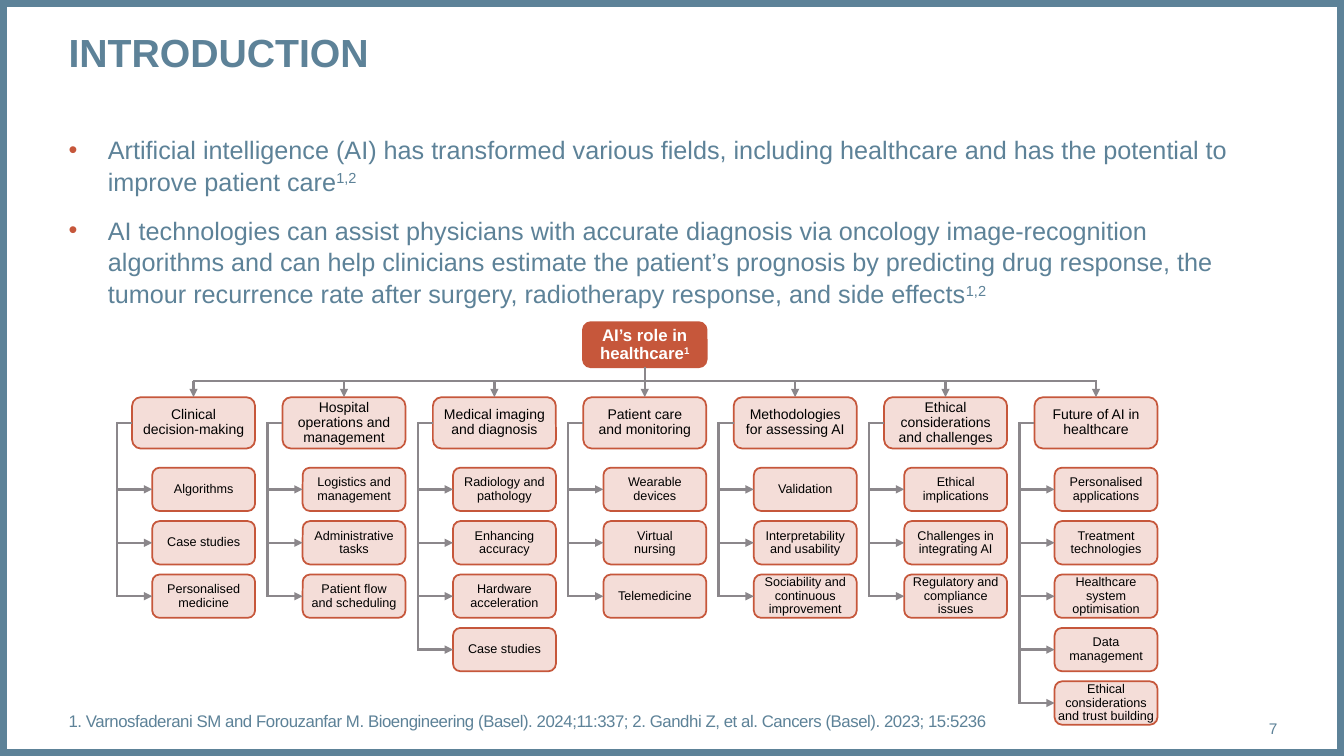
from dataclasses import dataclass
from typing import Any, NamedTuple, Optional

from lxml import etree
from pptx import Presentation
from pptx import util as u
from pptx.dml.color import RGBColor
from pptx.enum import shapes, text
from pptx.oxml.ns import qn


@dataclass(frozen=True)
class Theme:
    font: str = "Arial"
    slate: str = "5D8298"
    rust: str = "C6573B"
    blush: str = "F4DDD8"
    grey: str = "8B878B"
    white: str = "FFFFFF"
    black: str = "000000"
    title: float = 28
    body: float = 18
    reference: float = 12
    root: float = 12
    branch: float = 10
    leaf: float = 9
    page: float = 11


class Branch(NamedTuple):
    label: str
    leaves: list[str]


class Box(NamedTuple):
    left: float
    top: float
    width: float
    height: float

    @property
    def center(self) -> float:
        return self.left + self.width / 2

    @property
    def middle(self) -> float:
        return self.top + self.height / 2


THEME = Theme()
ALIGN = text.PP_ALIGN
ANCHOR = text.MSO_ANCHOR

POINTS = [
    "Artificial intelligence (AI) has transformed various fields, including healthcare "
    "and has the potential to improve patient care^1,2",
    "AI technologies can assist physicians with accurate diagnosis via oncology image-recognition\n"
    "algorithms and can help clinicians estimate the patient’s prognosis by predicting drug response, the\n"
    "tumour recurrence rate after surgery, radiotherapy response, and side effects^1,2",
]
REFERENCES = ("1. Varnosfaderani SM and Forouzanfar M. Bioengineering (Basel). 2024;11:337; "
              "2. Gandhi Z, et al. Cancers (Basel). 2023; 15:5236")
BRANCHES = [
    Branch("Clinical\ndecision-making", ["Algorithms", "Case studies", "Personalised\nmedicine"]),
    Branch("Hospital operations and management",
           ["Logistics and\nmanagement", "Administrative\ntasks", "Patient flow\nand scheduling"]),
    Branch("Medical imaging and diagnosis",
           ["Radiology and\npathology", "Enhancing\naccuracy", "Hardware\nacceleration", "Case studies"]),
    Branch("Patient care\nand monitoring", ["Wearable\ndevices", "Virtual\nnursing", "Telemedicine"]),
    Branch("Methodologies\nfor assessing AI",
           ["Validation", "Interpretability\nand usability", "Sociability and continuous\nimprovement"]),
    Branch("Ethical considerations\nand challenges",
           ["Ethical\nimplications", "Challenges in\nintegrating AI", "Regulatory and compliance issues"]),
    Branch("Future of AI in\nhealthcare",
           ["Personalised applications", "Treatment technologies", "Healthcare system optimisation",
            "Data management", "Ethical considerations and trust building"]),
]

BRANCH_LEFT, BRANCH_PITCH = 1.31, 8.95 / (len(BRANCHES) - 1)
LEAF_TOP, LEAF_PITCH = 4.64, 0.53
LEAF_INDENT, SPINE_OFFSET = 0.2, 0.15
BUS_Y = 3.78


def color(value: str) -> RGBColor:
    return RGBColor.from_string(value)


def place(part: Any, box: Box) -> None:
    part.left, part.top, part.width, part.height = map(u.Inches, box)


def write(part: Any, *paragraphs: str, size: float, ink: str = THEME.slate, bold: bool = False,
          align: Any = ALIGN.LEFT, anchor: Any = ANCHOR.TOP, line_spacing: float = 1.0,
          gap: float = 0, bullet: bool = False, tracking: int = 0) -> None:
    frame = part.text_frame
    frame.word_wrap = True
    frame.auto_size = text.MSO_AUTO_SIZE.NONE
    frame.vertical_anchor = anchor
    frame.margin_left = frame.margin_right = frame.margin_top = frame.margin_bottom = 0
    for index, content in enumerate(paragraphs):
        para = frame.add_paragraph() if index else frame.paragraphs[0]
        para.alignment = align
        para.line_spacing = line_spacing
        para.space_before = u.Pt(gap if index else 0)
        if bullet:
            props = para._p.get_or_add_pPr()
            props.set("marL", str(u.Inches(0.39)))
            props.set("indent", str(u.Inches(-0.39)))
            tint = etree.SubElement(props, qn("a:buClr"))
            etree.SubElement(tint, qn("a:srgbClr"), val=THEME.rust)
            etree.SubElement(props, qn("a:buFont"), typeface=THEME.font)
            etree.SubElement(props, qn("a:buChar"), char="•")
        for level, piece in enumerate(content.split("^")):
            for row, line in enumerate(piece.split("\n")):
                if row:
                    para.add_line_break()
                run = para.add_run()
                run.text = line
                run.font.name, run.font.size, run.font.bold = THEME.font, u.Pt(size), bold
                run.font.color.rgb = color(ink)
                if level:
                    run._r.get_or_add_rPr().set("baseline", "30000")
                if tracking:
                    run._r.get_or_add_rPr().set("spc", str(tracking))


def add_node(slide: Any, box: Box, label: str, size: float, fill: str = THEME.blush,
             ink: str = THEME.black, weight: float = 1.25, bold: bool = False) -> Any:
    node = slide.shapes.add_shape(shapes.MSO_SHAPE.ROUNDED_RECTANGLE, *map(u.Inches, box))
    node.shadow.inherit = False
    node.adjustments[0] = 0.17
    node.fill.solid()
    node.fill.fore_color.rgb = color(fill)
    node.line.color.rgb = color(THEME.rust)
    node.line.width = u.Pt(weight)
    write(node, label, size=size, ink=ink, bold=bold, align=ALIGN.CENTER,
          anchor=ANCHOR.MIDDLE, line_spacing=0.9)
    return node


def add_link(slide: Any, x1: float, y1: float, x2: float, y2: float, weight: float = 1.75,
             arrow: bool = False, source: Optional[tuple[Any, int]] = None,
             target: Optional[tuple[Any, int]] = None) -> None:
    link = slide.shapes.add_connector(shapes.MSO_CONNECTOR.STRAIGHT, *map(u.Inches, (x1, y1, x2, y2)))
    link.line.color.rgb = color(THEME.grey)
    link.line.width = u.Pt(weight)
    if arrow:
        etree.SubElement(link.line._get_or_add_ln(), qn("a:tailEnd"), type="triangle")
    etree.SubElement(link._element.spPr, qn("a:effectLst"))
    if source:
        link.begin_connect(*source)
    if target:
        link.end_connect(*target)


def add_branch(slide: Any, branch: Branch, left: float, root: Any, root_box: Box) -> None:
    box = Box(left, 3.94, 1.22, 0.51)
    head = add_node(slide, box, branch.label, THEME.branch)
    under_root = abs(box.center - root_box.center) < 0.05
    add_link(slide, box.center, root_box.top + root_box.height if under_root else BUS_Y,
             box.center, box.top, arrow=True, source=(root, 2) if under_root else None, target=(head, 0))
    spine = left - SPINE_OFFSET
    add_link(slide, spine, box.middle, left, box.middle, target=(head, 1))
    for row, label in enumerate(branch.leaves):
        leaf_box = Box(left + LEAF_INDENT, LEAF_TOP + row * LEAF_PITCH, 1.02, 0.43)
        leaf = add_node(slide, leaf_box, label, THEME.leaf)
        add_link(slide, spine, leaf_box.middle, leaf_box.left, leaf_box.middle, arrow=True, target=(leaf, 1))
    add_link(slide, spine, box.middle - 0.01, spine, leaf_box.middle + 0.01)


def main() -> None:
    deck = Presentation()
    deck.slide_width, deck.slide_height = u.Inches(13.33), u.Inches(7.5)
    slide = deck.slides.add_slide(deck.slide_layouts[1])

    border = slide.shapes.add_shape(shapes.MSO_SHAPE.RECTANGLE, 0, 0, deck.slide_width, deck.slide_height)
    border.shadow.inherit = False
    border.fill.background()
    border.line.color.rgb = color(THEME.slate)
    border.line.width = u.Pt(10)

    title, body = slide.shapes.title, slide.placeholders[1]
    place(title, Box(0.68, 0.28, 11.99, 0.94))
    write(title, "INTRODUCTION", size=THEME.title, bold=True)
    place(body, Box(0.68, 1.32, 11.99, 2.06))
    write(body, *POINTS, size=THEME.body, line_spacing=1.05, gap=12, bullet=True)

    references = slide.shapes.add_textbox(*map(u.Inches, (0.68, 6.95, 11.13, 0.4)))
    write(references, REFERENCES, size=THEME.reference, anchor=ANCHOR.MIDDLE, tracking=-30)
    page_number = slide.shapes.add_textbox(*map(u.Inches, (11.81, 7.03, 0.86, 0.4)))
    write(page_number, "7", size=THEME.page, align=ALIGN.RIGHT, anchor=ANCHOR.MIDDLE)

    lefts = [BRANCH_LEFT + column * BRANCH_PITCH for column in range(len(BRANCHES))]
    root_box = Box(lefts[len(lefts) // 2], 3.2, 1.22, 0.44)
    root = add_node(slide, root_box, "AI’s role in\nhealthcare^1", THEME.root, fill=THEME.rust,
                    ink=THEME.white, weight=1.75, bold=True)
    add_link(slide, lefts[0] + 0.6, BUS_Y, lefts[-1] + 0.62, BUS_Y, weight=2)
    for branch, left in zip(BRANCHES, lefts):
        add_branch(slide, branch, left, root, root_box)

    deck.save("out.pptx")


if __name__ == "__main__":
    main()
